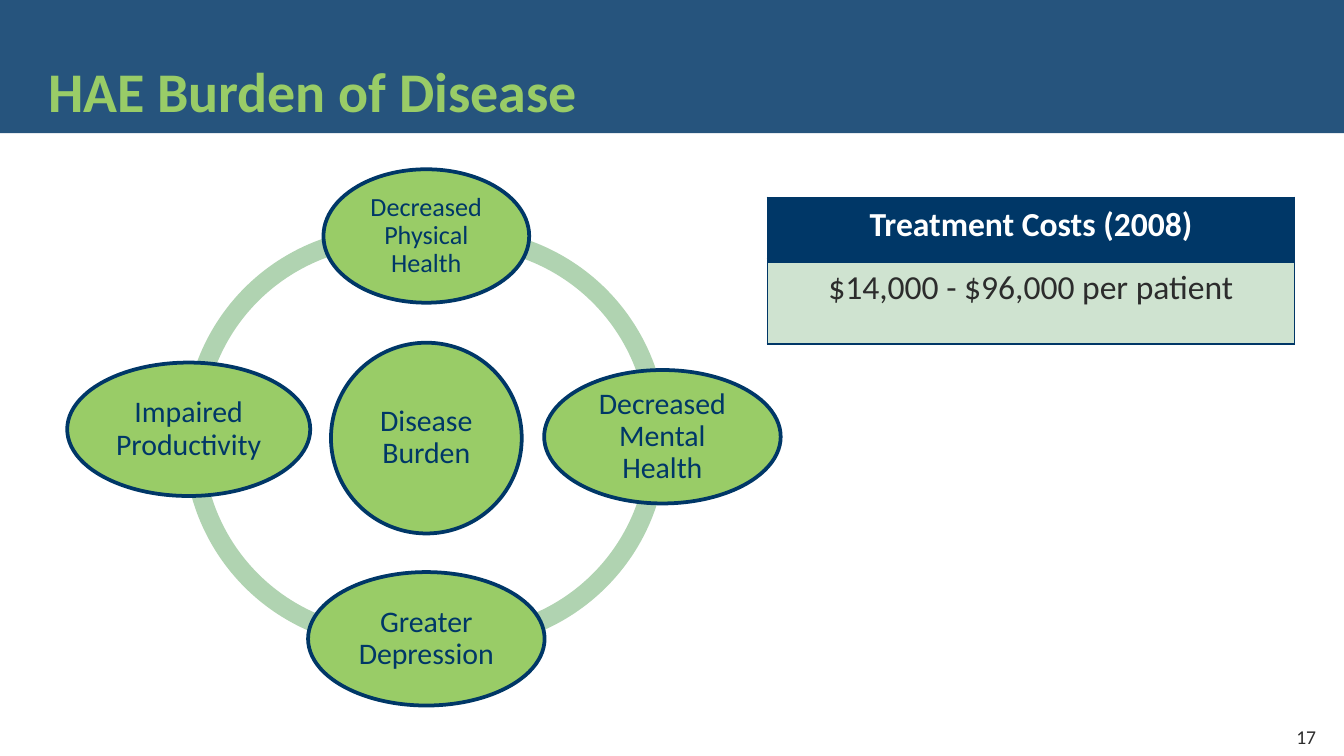
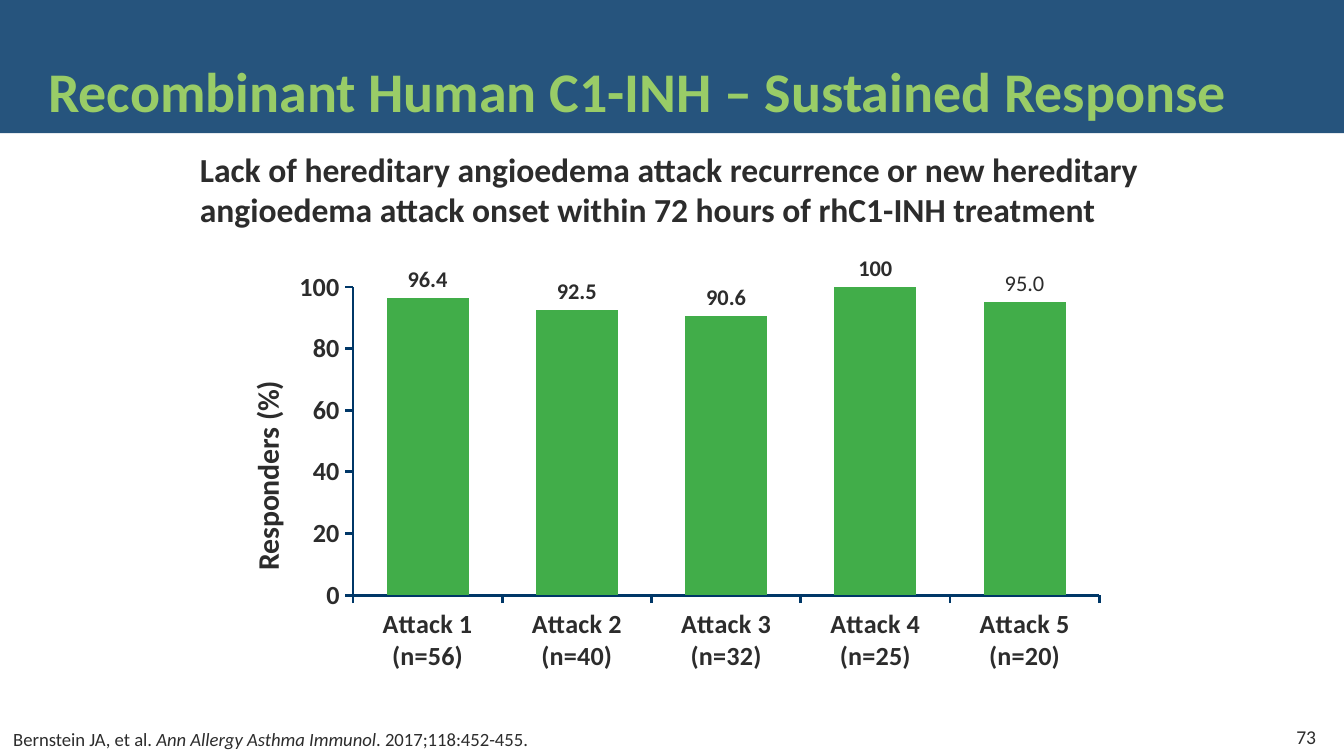
from dataclasses import dataclass
from lxml import etree
from pptx import Presentation
from pptx.chart.data import CategoryChartData
from pptx.dml.color import RGBColor
from pptx.enum.chart import XL_CHART_TYPE, XL_LABEL_POSITION, XL_TICK_MARK
from pptx.enum.shapes import MSO_SHAPE
from pptx.enum.text import MSO_ANCHOR, PP_ALIGN
from pptx.oxml.ns import qn
from pptx.util import Pt

LEFT, CENTER, RIGHT = PP_ALIGN.LEFT, PP_ALIGN.CENTER, PP_ALIGN.RIGHT
TOP, MIDDLE, BOTTOM = MSO_ANCHOR.TOP, MSO_ANCHOR.MIDDLE, MSO_ANCHOR.BOTTOM
RECTANGLE, ELLIPSE, ARC = MSO_SHAPE.RECTANGLE, MSO_SHAPE.OVAL, MSO_SHAPE.BLOCK_ARC
COLUMNS = XL_CHART_TYPE.COLUMN_CLUSTERED
OUTSIDE_END = XL_LABEL_POSITION.OUTSIDE_END
TICK_OUT, TICK_NONE = XL_TICK_MARK.OUTSIDE, XL_TICK_MARK.NONE


@dataclass(frozen=True)
class Theme:
    font: str = "Calibri"
    navy: str = "003767"
    lime: str = "99CC67"
    green: str = "41AD49"
    ring: str = "B0D3B1"
    pale: str = "CFE3D0"
    ink: str = "2C2C2C"
    white: str = "FFFFFF"
    title: float = 30
    body: float = 18
    node: float = 16
    small_node: float = 14
    axis: float = 14
    label: float = 12
    number: float = 10.5
    source: float = 10


THEME = Theme()
PAGE_WIDTH, PAGE_HEIGHT = 720, 405
BAND_HEIGHT = 71.3


def rgb(value):
    return RGBColor.from_string(value)


def child(parent, tag, **attributes):
    return etree.SubElement(parent, qn(tag), {key: str(value) for key, value in attributes.items()})


def style_font(font, size, color=THEME.ink, bold=False, italic=False):
    font.name = THEME.font
    font.size = Pt(size)
    font.bold = bold
    font.italic = italic
    font.color.rgb = rgb(color)


def cast_shadow(span):
    effects = etree.Element(qn("a:effectLst"))
    shadow = child(effects, "a:outerShdw", blurRad=Pt(4), dist=Pt(3), dir=2700000, algn="tl")
    child(child(shadow, "a:srgbClr", val="000000"), "a:alpha", val=50000)
    span._r.get_or_add_rPr().find(qn("a:solidFill")).addnext(effects)


def write(frame, text, size=THEME.body, color=THEME.ink, bold=False, align=LEFT,
          anchor=TOP, spacing=None, inset=None, shadow=False):
    frame.word_wrap = True
    frame.vertical_anchor = anchor
    if inset is not None:
        frame.margin_left = frame.margin_right = Pt(inset)
        frame.margin_top = frame.margin_bottom = Pt(inset)
    para = frame.paragraphs[0]
    para.alignment = align
    para.line_spacing = spacing
    parts = [(text, False)] if isinstance(text, str) else text
    for words, italic in parts:
        span = para.add_run()
        span.text = words
        style_font(span.font, size, color, bold, italic)
        if shadow:
            cast_shadow(span)


def add_text(page, box, text, **style):
    write(page.shapes.add_textbox(*map(Pt, box)).text_frame, text, **style)


def add_shape(page, kind, box, fill, line=None):
    shape = page.shapes.add_shape(kind, *map(Pt, box))
    shape.shadow.inherit = False
    shape.fill.solid()
    shape.fill.fore_color.rgb = rgb(fill)
    if line:
        shape.line.color.rgb = rgb(line)
        shape.line.width = Pt(2)
    else:
        shape.line.fill.background()
    return shape


def add_page(deck, title, number):
    page = deck.slides.add_slide(deck.slide_layouts[6])
    band = add_shape(page, RECTANGLE, (0, 0, PAGE_WIDTH, BAND_HEIGHT), THEME.navy)
    child(band.fill._xPr.find(qn("a:solidFill"))[0], "a:alpha", val=85000)
    add_text(page, (18.7, 17.3, 660, 53.3), title, size=THEME.title, color=THEME.lime,
             bold=True, anchor=BOTTOM, spacing=0.9, shadow=True)
    add_text(page, (679, 383.8, 33.1, 21.6), str(number), size=THEME.number,
             align=RIGHT, anchor=MIDDLE)
    return page


def add_burden_cycle(page, box):
    left, top, width, height = box
    diameter, node_height = 221.8, 71.5
    arcs = [
        (62.6, 31, 181.41, 280.18),
        (62.6, 34.6, 79.75, 183.23),
        (99.4, 34.6, 358.91, 99.59),
        (99.4, 31.7, 260.42, 0.51),
    ]
    for x, y, start, end in arcs:
        arc = add_shape(page, ARC, (left + x, top + y, diameter, diameter), THEME.ring)
        arc.adjustments[0] = start * 0.6
        arc.adjustments[1] = end * 0.6
        arc.adjustments[2] = 0.046

    middle = 192.4
    nodes = [
        ("Disease Burden", middle, 144, 102.2, 102.2, THEME.node),
        ("Decreased Physical Health", middle, node_height / 2, 110.2, node_height, THEME.small_node),
        ("Decreased Mental Health", width - 63.4, 143.3, 126.7, node_height, THEME.node),
        ("Greater Depression", middle, height - node_height / 2, 126.7, node_height, THEME.node),
        ("Impaired Productivity", 65.1, 139.3, 130.2, node_height, THEME.node),
    ]
    for text, x, y, across, high, size in nodes:
        place = (left + x - across / 2, top + y - high / 2, across, high)
        node = add_shape(page, ELLIPSE, place, THEME.lime, THEME.navy)
        write(node.text_frame, text, size=size, color=THEME.navy, align=CENTER,
              anchor=MIDDLE, spacing=0.9, inset=1.44)


def add_cost_table(page, box):
    rows = [
        ("Treatment Costs (2008)", 33.9, THEME.navy, THEME.white, True, 3),
        ("$14,000 - $96,000 per patient", 44.6, THEME.pale, THEME.ink, False, 1),
    ]
    table = page.shapes.add_table(len(rows), 1, *map(Pt, box)).table
    table.first_row = table.horz_banding = False
    for index, (text, height, fill, color, bold, bottom) in enumerate(rows):
        table.rows[index].height = Pt(height)
        cell = table.cell(index, 0)
        top = rows[index - 1][-1] if index else 1
        properties = cell._tc.get_or_add_tcPr()
        for side, weight in (("L", 1), ("R", 1), ("T", top), ("B", bottom)):
            border = child(properties, f"a:ln{side}", w=Pt(weight))
            child(child(border, "a:solidFill"), "a:srgbClr", val=THEME.navy)
        cell.fill.solid()
        cell.fill.fore_color.rgb = rgb(fill)
        write(cell.text_frame, text, color=color, bold=bold, align=CENTER)


def set_layout(element, **values):
    layout = element.find(qn("c:layout"))
    if layout is None:
        layout = etree.Element(qn("c:layout"))
        element.insert(0, layout)
    manual = child(layout, "c:manualLayout")
    if "w" in values:
        child(manual, "c:layoutTarget", val="inner")
    for mode in ("xMode", "yMode"):
        child(manual, f"c:{mode}", val="edge")
    for name, value in values.items():
        child(manual, f"c:{name}", val=value)


def style_axis(axis):
    axis.has_major_gridlines = False
    axis.major_tick_mark = TICK_OUT
    axis.minor_tick_mark = TICK_NONE
    axis.format.line.color.rgb = rgb(THEME.navy)
    axis.format.line.width = Pt(1.5)
    style_font(axis.tick_labels.font, THEME.axis, bold=True)


def add_response_chart(page, box):
    patients = [56, 40, 32, 25, 20]
    data = CategoryChartData()
    data.categories = [f"Attack {index} (n={count})" for index, count in enumerate(patients, 1)]
    data.add_series("Series 1", [96.4, 92.5, 90.6, 100, 95])
    chart = page.shapes.add_chart(COLUMNS, *map(Pt, box), data).chart
    chart.has_legend = chart.has_title = False
    style_font(chart.font, THEME.node, bold=True)
    set_layout(chart._chartSpace.find(f".//{qn('c:plotArea')}"), x=0.144, y=0.089, w=0.833, h=0.715)

    style_axis(chart.category_axis)
    scale = chart.value_axis
    style_axis(scale)
    scale.minimum_scale, scale.maximum_scale, scale.major_unit = 0, 100, 20
    write_title = scale.axis_title.text_frame.paragraphs[0].add_run()
    write_title.text = "Responders (%)"
    style_font(write_title.font, THEME.node, bold=True)
    set_layout(scale.axis_title._element, x=0.02, y=0.295)

    plot = chart.plots[0]
    plot.gap_width = 82
    plot.vary_by_categories = False
    series = plot.series[0]
    series.format.fill.solid()
    series.format.fill.fore_color.rgb = rgb(THEME.green)
    labels = series.data_labels
    labels.show_value = True
    labels.position = OUTSIDE_END
    labels.number_format = "General"
    labels.number_format_is_linked = False
    style_font(labels.font, THEME.label, bold=True)
    last = series.points[4].data_label
    span = last.text_frame.paragraphs[0].add_run()
    span.text = "95.0"
    style_font(span.font, THEME.label)
    last.position = OUTSIDE_END


def build_burden_page(deck):
    page = add_page(deck, "HAE Burden of Disease", 17)
    add_burden_cycle(page, (36, 90.7, 382.3, 287.3))
    add_cost_table(page, (411.1, 105.8, 282.5, 78.5))


def build_response_page(deck):
    page = add_page(deck, "Recombinant Human C1-INH – Sustained Response", 73)
    add_text(page, (0, 385.9, 450, 19.4),
             [("Bernstein JA, et al. ", False), ("Ann Allergy Asthma Immunol", True),
              (". 2017;118:452-455.", False)], size=THEME.source, anchor=BOTTOM)
    add_text(page, (100, 76.3, 520, 51),
             "Lack of hereditary angioedema attack recurrence or new hereditary "
             "angioedema attack onset within 72 hours of rhC1-INH treatment", bold=True)
    add_response_chart(page, (120, 133.2, 480, 231))


def main():
    deck = Presentation()
    deck.slide_width, deck.slide_height = Pt(PAGE_WIDTH), Pt(PAGE_HEIGHT)
    build_burden_page(deck)
    build_response_page(deck)
    deck.save("out.pptx")


if __name__ == "__main__":
    main()
